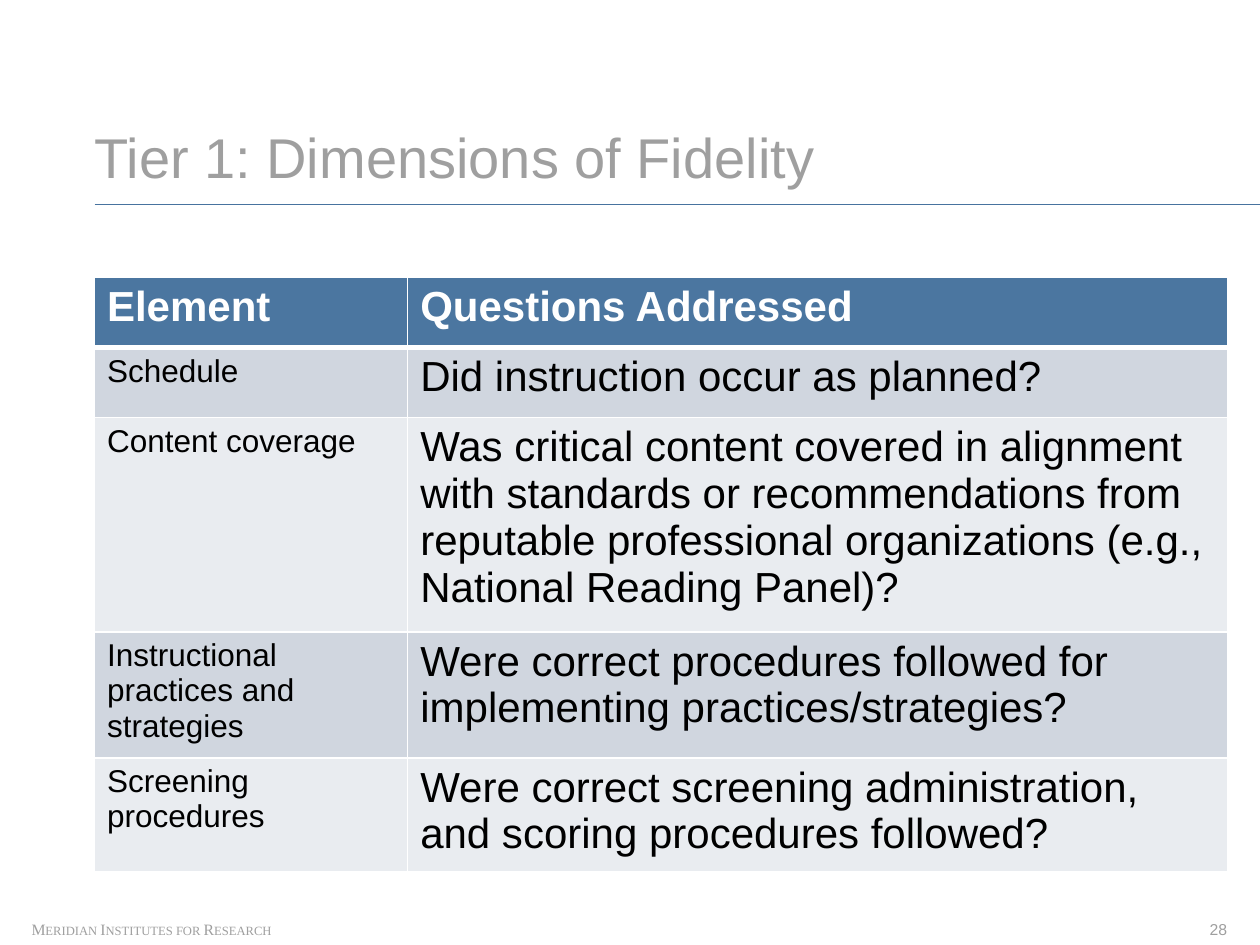
"""Build the Tier 1 fidelity slide with its table of elements and questions."""
from lxml.etree import SubElement
from pptx import Presentation
from pptx.dml.color import RGBColor
from pptx.enum.shapes import MSO_CONNECTOR as Connector
from pptx.enum.text import MSO_ANCHOR as Anchor, PP_ALIGN as Align
from pptx.oxml.ns import qn
from pptx.util import Pt

WHITE = RGBColor(0xFF, 0xFF, 0xFF)
BLACK = RGBColor(0, 0, 0)
GRAY = RGBColor(0x9F, 0x9F, 0x9F)
RULE_BLUE = RGBColor(0x47, 0x73, 0x9F)
HEADER_BLUE = RGBColor(0x4B, 0x76, 0xA0)
BANDS = (RGBColor(0xD0, 0xD6, 0xDF), RGBColor(0xE9, 0xEC, 0xF0))

TITLE = "Tier 1: Dimensions of Fidelity"
FOOTER = "Meridian Institutes for Research"
PAGE_NUMBER = "28"
ROWS = [
    ("Element", "Questions Addressed"),
    ("Schedule", "Did instruction occur as planned?"),
    ("Content coverage",
     "Was critical content covered in alignment with standards or recommendations "
     "from reputable professional organizations (e.g., National Reading Panel)?"),
    ("Instructional practices and strategies",
     "Were correct procedures followed for implementing practices/strategies?"),
    ("Screening procedures",
     "Were correct screening administration, and scoring procedures followed?"),
]
ROW_HEIGHTS = (40, 40, 114, 69, 60)
COLUMN_WIDTHS = (179, 468.5)
LEFT, TABLE_TOP, RULE_TOP = 54, 158.6, 117
SLIDE_WIDTH, SLIDE_HEIGHT = 720, 540


def add_run(paragraph, text, size, color, font="Arial", bold=False):
    run = paragraph.add_run()
    run.text = text
    run.font.name, run.font.size, run.font.bold = font, Pt(size), bold
    run.font.color.rgb = color
    return run


def add_text(slide, box, text, size, font="Arial", align=Align.LEFT,
             anchor=Anchor.TOP, wrap=False):
    frame = slide.shapes.add_textbox(*map(Pt, box)).text_frame
    frame.margin_left = frame.margin_top = frame.margin_right = frame.margin_bottom = 0
    frame.word_wrap, frame.vertical_anchor = wrap, anchor
    frame.paragraphs[0].alignment = align
    return add_run(frame.paragraphs[0], text, size, GRAY, font)


def set_borders(cell, top, bottom):
    properties = cell._tc.get_or_add_tcPr()
    for side, width in (("L", 1), ("R", 1), ("T", top), ("B", bottom)):
        line = SubElement(properties, qn(f"a:ln{side}"), w=str(Pt(width)))
        fill = SubElement(line, qn("a:solidFill"))
        SubElement(fill, qn("a:srgbClr"), val=str(WHITE))


def add_fidelity_table(slide):
    table = slide.shapes.add_table(
        len(ROWS), len(COLUMN_WIDTHS), Pt(LEFT), Pt(TABLE_TOP),
        Pt(sum(COLUMN_WIDTHS)), Pt(sum(ROW_HEIGHTS))).table
    for column, width in zip(table.columns, COLUMN_WIDTHS):
        column.width = Pt(width)
    for index, (row, height, texts) in enumerate(zip(table.rows, ROW_HEIGHTS, ROWS)):
        row.height = Pt(height)
        header = index == 0
        for cell, text, body_size in zip(row.cells, texts, (18, 24)):
            set_borders(cell, 3 if index == 1 else 1, 3 if header else 1)
            cell.fill.solid()
            cell.fill.fore_color.rgb = HEADER_BLUE if header else BANDS[(index - 1) % 2]
            add_run(cell.text_frame.paragraphs[0], text, 24 if header else body_size,
                    WHITE if header else BLACK, bold=header)


def main():
    presentation = Presentation()
    presentation.slide_width, presentation.slide_height = Pt(SLIDE_WIDTH), Pt(SLIDE_HEIGHT)
    slide = presentation.slides.add_slide(presentation.slide_layouts[6])

    footer = add_text(slide, (18, 525.6, 140.4, 10.8), FOOTER, 9, "Times New Roman")
    footer.font._element.set("cap", "small")
    rule = slide.shapes.add_connector(
        Connector.STRAIGHT, Pt(LEFT), Pt(RULE_TOP), Pt(SLIDE_WIDTH), Pt(RULE_TOP))
    rule.line.color.rgb, rule.line.width = RULE_BLUE, Pt(0.5)
    SubElement(rule._element.spPr, qn("a:effectLst"))
    add_text(slide, (LEFT, 69.8, sum(COLUMN_WIDTHS), 38.9), TITLE, 32,
             anchor=Anchor.BOTTOM, wrap=True)
    add_text(slide, (690.5, 525.6, 10.8, 10.8), PAGE_NUMBER, 9, align=Align.RIGHT)
    add_fidelity_table(slide)
    presentation.save("out.pptx")


if __name__ == "__main__":
    main()
